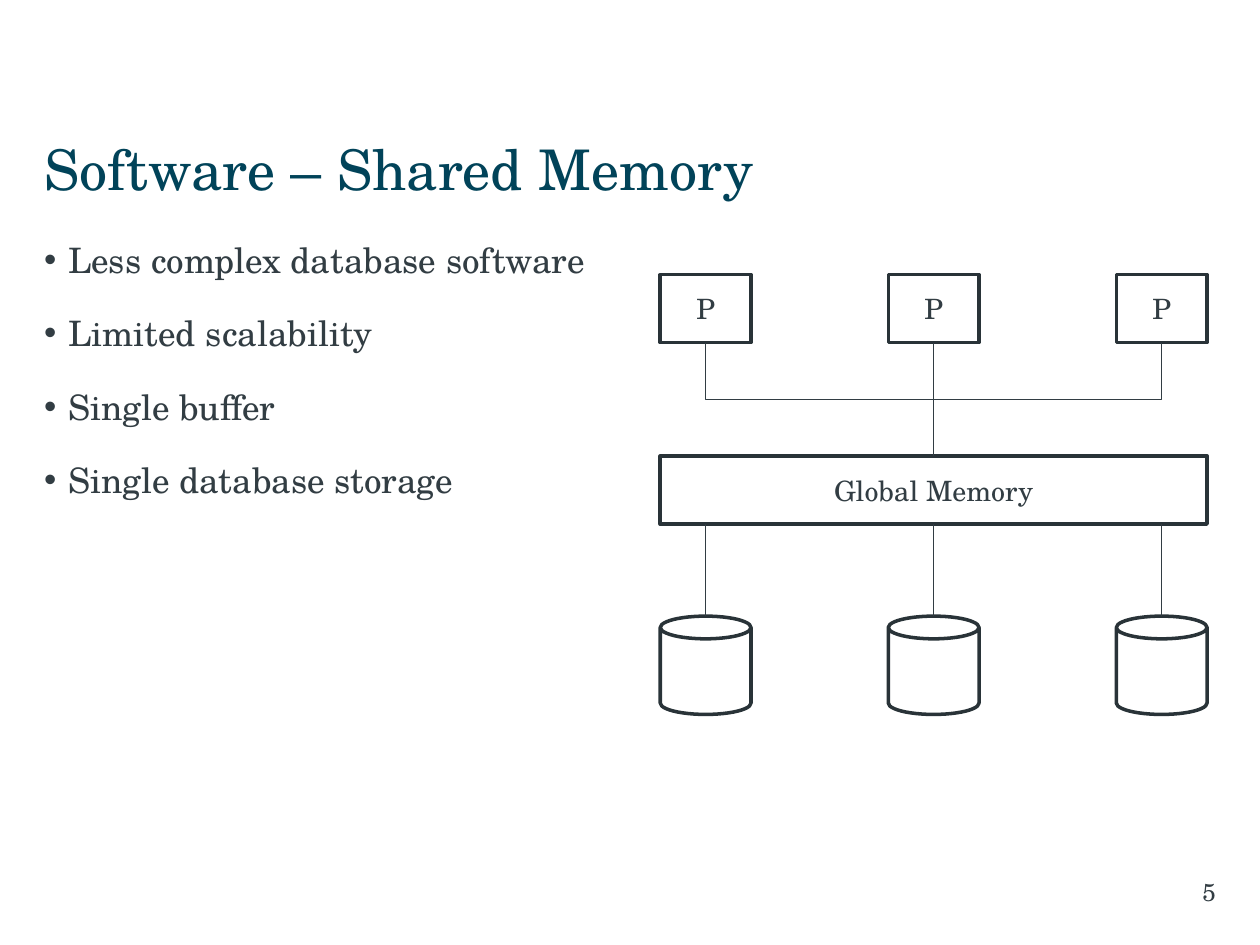
import pptx
import pptx.util
import pptx.dml.color
import pptx.enum.shapes
import pptx.enum.text
import pptx.oxml.ns
from lxml import etree

Inches, Pt = pptx.util.Inches, pptx.util.Pt
RGBColor = pptx.dml.color.RGBColor
SHAPE = pptx.enum.shapes.MSO_SHAPE
CONNECTOR = pptx.enum.shapes.MSO_CONNECTOR
ALIGN = pptx.enum.text.PP_ALIGN
ANCHOR = pptx.enum.text.MSO_ANCHOR

FONT = "TeX Gyre Schola"
TITLE_COLOR = RGBColor(0x01, 0x43, 0x59)
TEXT_COLOR = RGBColor(0x32, 0x3D, 0x43)
OUTLINE = RGBColor(0x29, 0x33, 0x38)
WHITE = RGBColor(0xFF, 0xFF, 0xFF)


def write(p, text, size, align=ALIGN.LEFT, color=TEXT_COLOR):
    p.alignment = align
    r = p.add_run()
    r.text = text
    r.font.name = FONT
    r.font.size = Pt(size)
    r.font.color.rgb = color


def place(sp, left, top, width, height, anchor, margin_left=0, margin_right=0.1):
    """Set the frame of a text shape and the way its text sits in it."""
    sp.left, sp.top = Inches(left), Inches(top)
    sp.width, sp.height = Inches(width), Inches(height)
    tf = sp.text_frame
    tf.word_wrap = True
    tf.auto_size = pptx.enum.text.MSO_AUTO_SIZE.NONE
    tf.vertical_anchor = anchor
    tf.margin_left, tf.margin_right = Inches(margin_left), Inches(margin_right)
    tf.margin_top = tf.margin_bottom = Inches(0.05)
    return tf


prs = pptx.Presentation()
prs.slide_width, prs.slide_height = Inches(10), Inches(7.5)
s = prs.slides.add_slide(prs.slide_layouts[1])

# Title, bullet list and page number
tf = place(s.shapes.title, 0.35, 0.98, 9.29, 0.71, ANCHOR.MIDDLE)
write(tf.paragraphs[0], "Software – Shared Memory", 32, color=TITLE_COLOR)

tf = place(s.placeholders[1], 0.35, 1.84, 4.48, 4.91, ANCHOR.TOP)
bullets = ["Less complex database software", "Limited scalability",
           "Single buffer", "Single database storage"]
for i, text in enumerate(bullets):
    p = tf.add_paragraph() if i else tf.paragraphs[0]
    write(p, text, 20)
    p.space_before, p.space_after = Pt(0), Pt(18)
    pPr = p._p.get_or_add_pPr()
    pPr.set("marL", str(Inches(0.19)))
    pPr.set("indent", str(-Inches(0.19)))

sp = s.shapes.add_textbox(0, 0, 0, 0)
tf = place(sp, 7.73, 6.91, 1.92, 0.34, ANCHOR.TOP, 0.1, 0)
write(tf.paragraphs[0], "5", 14, ALIGN.RIGHT)

# Diagram: processors above, shared memory between, disks below
COLUMNS = [5.24, 7.05, 8.86]
NODE_W, BOX_H, DISK_H = 0.72, 0.54, 0.78
CPU_TOP, MEMORY_TOP, DISK_TOP = 2.18, 3.62, 4.89
CPU_BOTTOM, MEMORY_BOTTOM = CPU_TOP + BOX_H, MEMORY_TOP + BOX_H
memory_w = COLUMNS[-1] + NODE_W - COLUMNS[0]
diagram = s.shapes.add_group_shape()

nodes = [(SHAPE.CAN, x, DISK_TOP, NODE_W, DISK_H, "") for x in COLUMNS]
nodes += [(SHAPE.RECTANGLE, x, CPU_TOP, NODE_W, BOX_H, "P") for x in COLUMNS]
nodes.append((SHAPE.RECTANGLE, COLUMNS[0], MEMORY_TOP, memory_w, BOX_H, "Global Memory"))
for kind, left, top, width, height, label in nodes:
    sp = diagram.shapes.add_shape(kind, Inches(left), Inches(top), Inches(width), Inches(height))
    sp.shadow.inherit = False
    sp.fill.solid()
    sp.fill.fore_color.rgb = WHITE
    sp.line.color.rgb = OUTLINE
    sp.line.width = Pt(2)
    if label:
        sp.text_frame.vertical_anchor = ANCHOR.MIDDLE
        write(sp.text_frame.paragraphs[0], label, 16, ALIGN.CENTER)

# Elbows are laid out sideways and then turned by a quarter
left_x, mid_x, right_x = [x + NODE_W / 2 for x in COLUMNS]
mid_y = (CPU_BOTTOM + MEMORY_TOP) / 2
half_drop = (MEMORY_TOP - CPU_BOTTOM) / 2
half_run = (mid_x - left_x) / 2
links = [(CONNECTOR.STRAIGHT, mid_x, CPU_BOTTOM, mid_x, MEMORY_TOP, 0)]
links += [(CONNECTOR.STRAIGHT, x, MEMORY_BOTTOM, x, DISK_TOP, 0)
          for x in (left_x, mid_x, right_x)]
for center, side, angle in [(left_x + half_run, -1, 270), (right_x - half_run, 1, 90)]:
    links.append((CONNECTOR.ELBOW, center - side * half_drop, mid_y - half_run,
                  center + side * half_drop, mid_y + half_run, angle))
for kind, x1, y1, x2, y2, angle in links:
    line = diagram.shapes.add_connector(kind, Inches(x1), Inches(y1), Inches(x2), Inches(y2))
    line.line.color.rgb = TEXT_COLOR
    line.line.width = Pt(0.75)
    spPr = line._element.spPr
    etree.SubElement(spPr, pptx.oxml.ns.qn("a:effectLst"))
    if angle:
        spPr.find(pptx.oxml.ns.qn("a:xfrm")).set("rot", str(angle * 60000))

prs.save("out.pptx")
